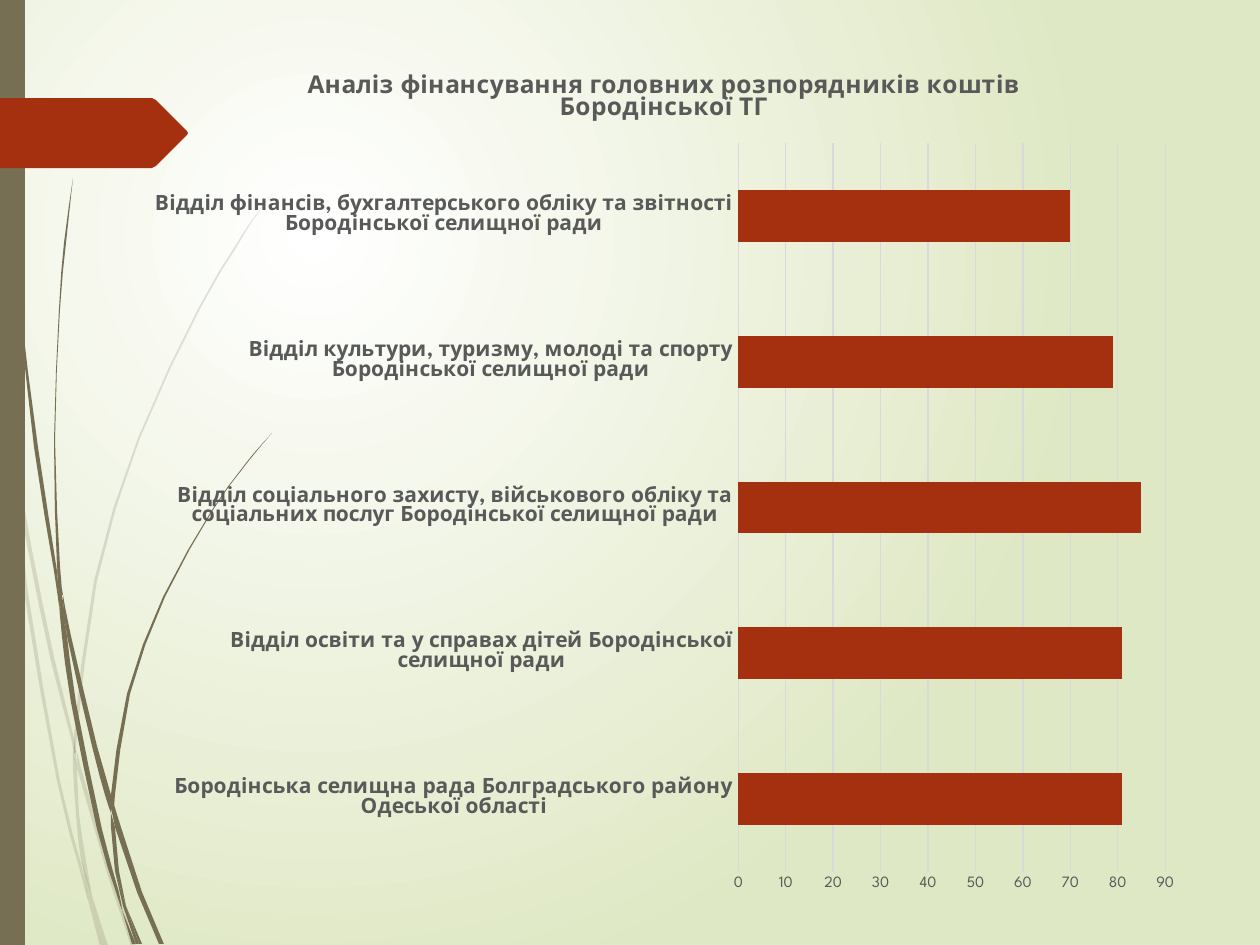
"""Build the slide on financing of the Borodino community's budget holders."""
from lxml import etree
from pptx import Presentation
from pptx import util as u
from pptx.chart import data
from pptx.dml.color import RGBColor
from pptx.enum import chart as ch
from pptx.enum import shapes
from pptx.oxml import ns, parse_xml

PX = 914400 / 126
FONT = "League Spartan"
OLIVE = RGBColor(0x76, 0x6F, 0x54)
RUST = RGBColor(0xA5, 0x30, 0x10)
WHITE = RGBColor(0xFF, 0xFF, 0xFF)
LIME = RGBColor(0xDF, 0xE8, 0xC4)
GREY = RGBColor(0x59, 0x59, 0x59)
GRID = RGBColor(0xD9, 0xD9, 0xD9)

TITLE = "Аналіз фінансування головних розпорядників коштів Бородінської ТГ"
FUNDING = {
    "Бородінська селищна рада Болградського району Одеської області": 81,
    "Відділ освіти та у справах дітей Бородінської селищної ради": 81,
    "Відділ соціального захисту, військового обліку та соціальних послуг "
    "Бородінської селищної ради": 85,
    "Відділ культури, туризму, молоді та спорту Бородінської селищної ради": 79,
    "Відділ фінансів, бухгалтерського обліку та звітності "
    "Бородінської селищної ради": 70,
}

# Each blade of grass is a list of stations: y, left edge, right edge.
PALE_BLADES = [
    [(355, 0, 0), (376, 0, 3), (406, 4, 8), (441, 10, 10)],
    [(435, 13, 13), (474, 15, 19), (550, 28, 32), (657, 50, 54), (738, 71, 74), (755, 74, 74)],
    [(751, 77, 77), (768, 77, 81), (873, 107, 111), (946, 131, 136)],
    [(896, 92, 92), (946, 105, 108)],
    [(441, 10, 10), (474, 12, 15), (592, 24, 28), (781, 57, 60), (867, 79, 82), (900, 88, 88)],
    [(755, 73, 73), (769, 73, 77), (814, 76, 79), (861, 81, 86), (896, 92, 92)],
    [(193, 273, 273), (220, 252, 253), (248, 234, 236), (307, 199, 201),
     (438, 138, 140), (581, 94, 97), (736, 74, 77), (751, 77, 77)],
    [(900, 88, 88), (946, 100, 103)],
    [(738, 74, 74), (755, 73, 76), (769, 77, 77)],
    [(861, 82, 82), (896, 87, 92), (946, 103, 105)],
]
DARK_BLADES = [
    [(0, 3, 4), (138, 6, 8), (293, 18, 19), (447, 34, 38), (571, 54, 57), (606, 59, 59)],
    [(595, 63, 63), (636, 67, 71), (746, 92, 97), (795, 105, 111), (813, 111, 111)],
    [(808, 115, 115), (827, 115, 121), (892, 137, 142), (944, 159, 164)],
    [(601, 59, 59), (636, 62, 67), (702, 71, 76), (829, 97, 102), (892, 116, 119), (910, 122, 122)],
    [(178, 73, 73), (243, 64, 66), (309, 59, 60), (440, 54, 55), (566, 57, 60), (595, 62, 63)],
    [(906, 126, 126), (944, 139, 142)],
    [(566, 57, 57), (601, 59, 63), (636, 67, 67)],
    [(433, 272, 272), (452, 255, 256), (471, 240, 241), (510, 212, 213),
     (597, 163, 165), (694, 127, 130), (795, 111, 115), (808, 115, 115)],
    [(910, 122, 122), (944, 132, 136)],
    [(813, 111, 111), (827, 111, 115), (871, 115, 119), (906, 126, 126)],
    [(795, 111, 111), (808, 111, 115), (827, 115, 115)],
    [(871, 115, 115), (906, 123, 126), (944, 136, 139)],
]
POINTER = [(0, 98), (152, 98), (156, 100), (187, 131), (188, 133), (187, 135),
           (156, 166), (152, 168), (0, 168)]


def px(length):
    """Turn pixels into EMU."""
    return u.Emu(round(length * PX))


def smooth(points):
    """Add the middle of a Catmull-Rom curve between neighbouring points."""
    padded = [points[0], *points, points[-1]]
    curve = []
    for a, b, c, d in zip(padded, padded[1:], padded[2:], padded[3:]):
        middle = tuple((9 * (q + r) - p - s) / 16 for p, q, r, s in zip(a, b, c, d))
        curve += [b, middle]
    return curve + [points[-1]]


def paint(shape, color, opacity=100):
    """Give a shape a flat fill without line or shadow."""
    shape.shadow.inherit = False
    shape.line.fill.background()
    shape.fill.solid()
    shape.fill.fore_color.rgb = color
    if opacity < 100:
        tint = shape.fill._xPr.find(".//" + ns.qn("a:srgbClr"))
        etree.SubElement(tint, ns.qn("a:alpha"), val=str(opacity * 1000))


def add_outline(slide, points, color, opacity=100):
    """Draw a closed filled outline."""
    start, *rest = [(px(x), px(y)) for x, y in points]
    builder = slide.shapes.build_freeform(*start, scale=1.0)
    builder.add_line_segments(rest, close=True)
    paint(builder.convert_to_shape(), color, opacity)


def add_blade(slide, stations, opacity):
    """Draw one blade of grass between its two edges."""
    curve = smooth(stations) if len(stations) > 4 else stations
    left = [(x, y) for y, x, _ in curve]
    right = [(x, y) for y, _, x in curve]
    outline = dict.fromkeys(left + right[::-1])
    add_outline(slide, outline, OLIVE, opacity)


def set_background(slide):
    """Fill the background with a glow around its upper left quarter."""
    fill = slide.background.fill
    fill.gradient()
    for stop, color, position in zip(fill.gradient_stops, (WHITE, LIME), (0, 1)):
        stop.color.rgb = color
        stop.position = position
    gradient = slide.element.find(".//" + ns.qn("a:gradFill"))
    gradient.remove(gradient.find(ns.qn("a:lin")))
    glow = etree.SubElement(gradient, ns.qn("a:path"), path="circle")
    etree.SubElement(glow, ns.qn("a:fillToRect"), l="50000", t="50000", r="100000", b="100000")


def style_font(font, size, color, bold=False):
    """Set the face, size, colour and weight of a font."""
    font.name = FONT
    font.size = u.Pt(size)
    font.color.rgb = color
    font.bold = bold


def place_plot(chart, **box):
    """Fix the inner plot area as fractions of the chart."""
    plot_area = chart._chartSpace.chart.plotArea
    for old in plot_area.findall(ns.qn("c:layout")):
        plot_area.remove(old)
    sizes = "".join(f'<c:{key} val="{value}"/>' for key, value in box.items())
    plot_area.insert(0, parse_xml(
        f'<c:layout {ns.nsdecls("c")}><c:manualLayout><c:layoutTarget val="inner"/>'
        f'<c:xMode val="edge"/><c:yMode val="edge"/>{sizes}</c:manualLayout></c:layout>'))


def add_funding_chart(slide):
    """Add the bar chart of funding by department."""
    funding = data.CategoryChartData()
    funding.categories = FUNDING.keys()
    funding.add_series("Series 1", FUNDING.values())
    chart = slide.shapes.add_chart(ch.XL_CHART_TYPE.BAR_CLUSTERED, px(133), px(45),
                                   px(1062), px(863), funding).chart
    style_font(chart.font, 10, RGBColor(0, 0, 0))
    chart.has_legend = False
    chart.has_title = True
    heading = chart.chart_title.text_frame.paragraphs[0]
    heading.text = TITLE
    style_font(heading.font, 14, GREY, bold=True)
    place_plot(chart, x=0.57, y=0.114, w=0.402, h=0.844)

    plot = chart.plots[0]
    plot.gap_width = 182
    plot.vary_by_categories = False
    bars = plot.series[0].format.fill
    bars.solid()
    bars.fore_color.rgb = RUST

    departments, scale = chart.category_axis, chart.value_axis
    for axis, size, bold in ((departments, 12, True), (scale, 9, False)):
        axis.major_tick_mark = axis.minor_tick_mark = ch.XL_TICK_MARK.NONE
        style_font(axis.tick_labels.font, size, GREY, bold)
    scale.minimum_scale, scale.maximum_scale, scale.major_unit = 0, 90, 10
    scale.format.line.fill.background()
    for line in (departments.format.line, scale.major_gridlines.format.line):
        line.color.rgb = GRID
        line.width = u.Pt(0.75)


def main():
    """Build and save the slide."""
    deck = Presentation()
    deck.slide_width, deck.slide_height = px(1260), px(945)
    slide = deck.slides.add_slide(deck.slide_layouts[6])
    set_background(slide)
    for blades, opacity in ((PALE_BLADES, 20), (DARK_BLADES, 100)):
        for stations in blades:
            add_blade(slide, stations, opacity)
    paint(slide.shapes.add_shape(shapes.MSO_SHAPE.RECTANGLE, 0, 0, px(25), px(945)), OLIVE)
    add_outline(slide, POINTER, RUST)
    add_funding_chart(slide)
    deck.save("out.pptx")


if __name__ == "__main__":
    main()
